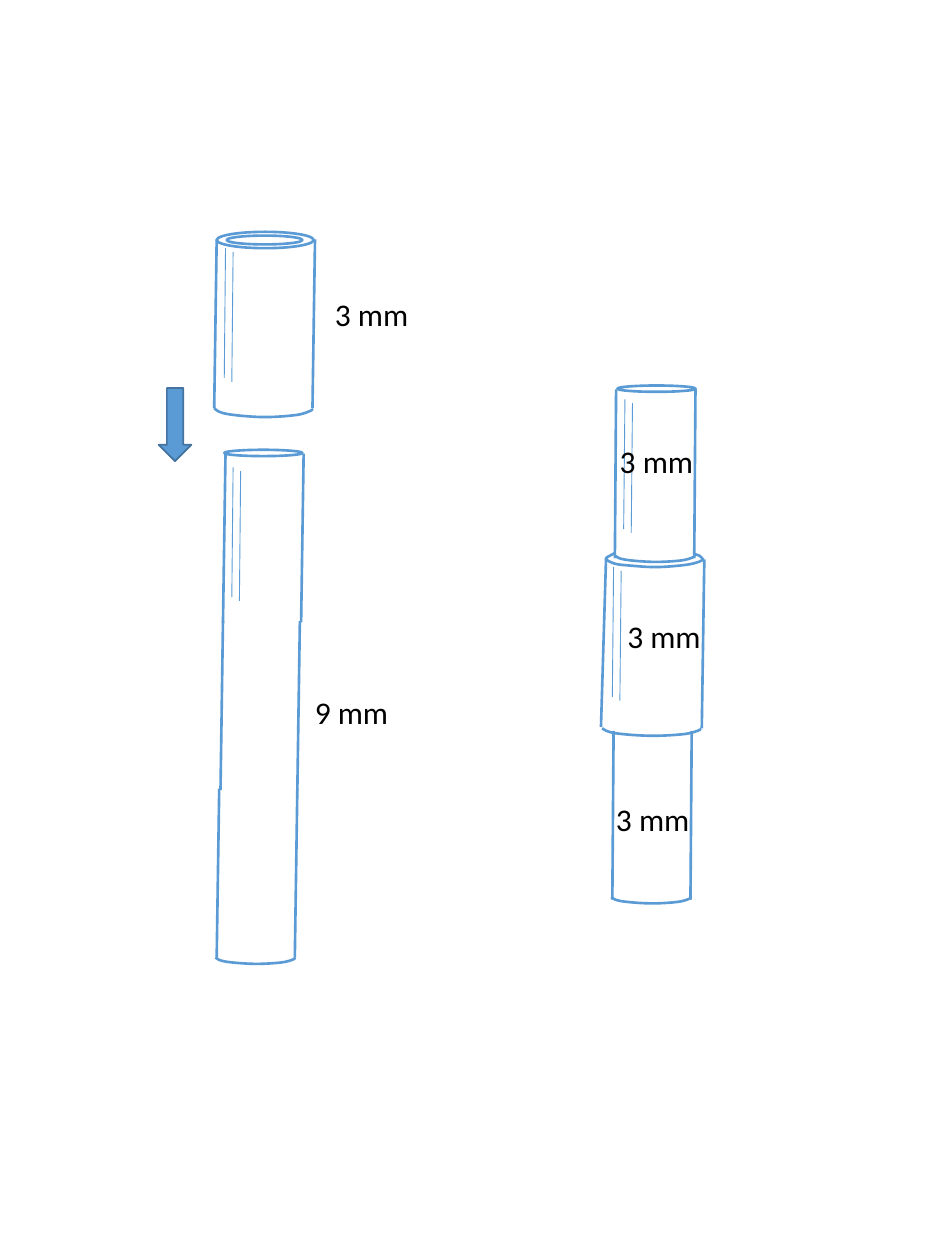
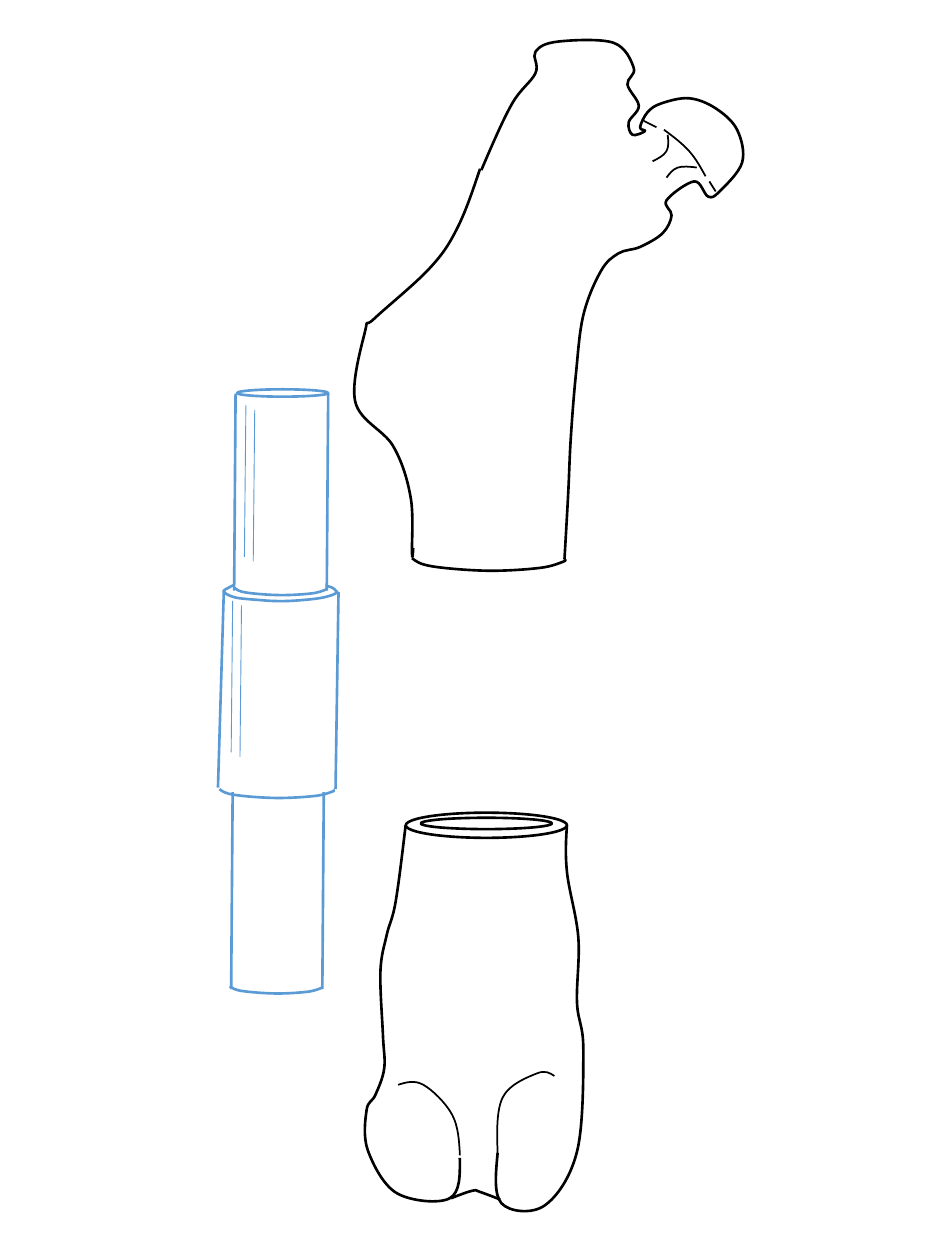
from dataclasses import dataclass, field

from lxml.etree import SubElement
from pptx import Presentation
from pptx.dml.color import RGBColor
from pptx.enum.shapes import MSO_CONNECTOR, MSO_SHAPE
from pptx.enum.text import MSO_AUTO_SIZE
from pptx.oxml.ns import qn
from pptx.util import Inches, Pt

BLUE, EDGE, BLACK = "5B9BD5", "43739E", "000000"
FONT = "Calibri"
THICK, MID, THIN = 1.5, 1, 0.5

ARC = [(0, 0), (0.13, 0.65), (0.49, 1), (0.83, 0.78), (0.98, 0.3), (0.99, 0.1)]
RIM = [(0.09, 0), (0.01, 0.3), (0, 0.38), (0.01, 0.5), (0.05, 0.66),
       (0.13, 0.82), (0.3, 0.93), (0.45, 1), (0.62, 0.98), (0.84, 0.83),
       (0.96, 0.62), (1, 0.45), (0.99, 0.37), (0.96, 0.18), (0.9, 0.06)]

KNEE = [
    (THICK, [(3.22, 6.55), (3.14, 7.16), (3.07, 7.42), (3.02, 7.71),
             (3.04, 8.22), (3.05, 8.48), (2.98, 8.69), (2.91, 8.81),
             (2.92, 9.13), (3.15, 9.47), (3.57, 9.51), (3.65, 9.19)]),
    (THICK, [(3.95, 9.15), (3.98, 9.55), (4.32, 9.57), (4.58, 9.14),
             (4.63, 8.33), (4.58, 7.96), (4.59, 7.44), (4.5, 6.92),
             (4.5, 6.55)]),
    (MID, [(3.65, 9.17), (3.59, 8.85), (3.36, 8.61), (3.16, 8.61)]),
    (MID, [(3.95, 9.16), (3.99, 8.71), (4.26, 8.52), (4.4, 8.54)]),
    (THICK, [(3.58, 9.51), (3.75, 9.45), (3.81, 9.46), (3.97, 9.52)]),
]
HIP = [
    (THICK, [(3.82, 1.35), (4.06, 0.83), (4.25, 0.58), (4.25, 0.41),
             (4.43, 0.33), (4.87, 0.34), (5.03, 0.54), (4.98, 0.67),
             (5.07, 0.84), (4.99, 0.97), (5.02, 1.07), (5.12, 1.04),
             (5.08, 1.01), (5.14, 0.89), (5.25, 0.82), (5.47, 0.78),
             (5.68, 0.86), (5.85, 1.03), (5.89, 1.29), (5.71, 1.52),
             (5.62, 1.56), (5.51, 1.44), (5.29, 1.59), (5.33, 1.71),
             (5.26, 1.85), (5.08, 1.96), (4.91, 2.01), (4.77, 2.15),
             (4.63, 2.5), (4.57, 2.98), (4.53, 3.48), (4.51, 3.91),
             (4.48, 4.44)]),
    (THICK, [(3.81, 1.34), (3.63, 1.81), (3.41, 2.13), (2.97, 2.53),
             (2.9, 2.62), (2.82, 3.19), (3.12, 3.54), (3.26, 3.95),
             (3.27, 4.39), (3.28, 4.35)]),
    (MID, [(5.27, 1.03), (5.47, 1.2), (5.6, 1.4)]),
    (MID, [(5.3, 1.07), (5.29, 1.2), (5.18, 1.28)]),
    (MID, [(5.53, 1.33), (5.38, 1.33), (5.29, 1.41)]),
]


def color(code):
    return RGBColor.from_string(code)


def knots(pts):
    trios = []
    last = len(pts) - 1
    for i in range(last):
        a, b = pts[i], pts[i + 1]
        lead = tail = None
        if i > 0:
            lead = tuple(p + (n - m) / 6 for m, p, n in zip(pts[i - 1], a, b))
        if i + 1 < last:
            tail = tuple(p - (n - m) / 6 for m, p, n in zip(a, b, pts[i + 2]))
        lead = lead or tuple((p + q) / 2 for p, q in zip(a, tail))
        tail = tail or tuple((p + q) / 2 for p, q in zip(lead, b))
        trios += [lead, tail, b]
    return trios


@dataclass
class Pen:
    slide: object
    ink: str
    x: float = 0
    y: float = 0
    scale: float = 1
    drawn: list = field(default_factory=list)

    def at(self, x, y):
        return Inches(self.x + x * self.scale), Inches(self.y + y * self.scale)

    def style(self, item, width):
        item.line.color.rgb = color(self.ink)
        item.line.width = Pt(width)
        self.drawn.append(item)

    def line(self, start, end, width=THICK):
        item = self.slide.shapes.add_connector(
            MSO_CONNECTOR.STRAIGHT, *self.at(*start), *self.at(*end))
        SubElement(item._element.spPr, qn("a:effectLst"))
        self.style(item, width)

    def oval(self, x, y, w, h):
        item = self.slide.shapes.add_shape(
            MSO_SHAPE.OVAL, *self.at(x, y),
            Inches(w * self.scale), Inches(h * self.scale))
        item.shadow.inherit = False
        item.fill.background()
        self.style(item, THICK)

    def curve(self, pts, width=THICK):
        form = self.slide.shapes.build_freeform(*self.at(*pts[0]))
        form.add_line_segments([self.at(*p) for p in knots(pts)], close=False)
        item = form.convert_to_shape()
        trace = item._element.find(".//" + qn("a:path"))
        steps = trace.findall(qn("a:lnTo"))
        for i in range(0, len(steps), 3):
            bend = SubElement(trace, qn("a:cubicBezTo"))
            for step in steps[i:i + 3]:
                bend.append(step[0])
                trace.remove(step)
        item.shadow.inherit = False
        item.fill.background()
        self.style(item, width)

    def fit(self, form, x, y, w, h):
        self.curve([(x + u * w, y + v * h) for u, v in form])

    def wall(self, x, y, lean=0.02):
        self.line((x, y), (x - lean, y + 1.34))

    def shine(self, x, y):
        for dx, dy in ((0, 0), (0.06, 0.03)):
            self.line((x + dx, y + dy), (x + dx - 0.01, y + dy + 1.03), THIN)

    def group(self):
        self.slide.shapes.add_group_shape(self.drawn)


def sleeve(pen):
    pen.oval(1.72, 1.84, 0.77, 0.13)
    pen.oval(1.8, 1.87, 0.6, 0.07)
    pen.fit(ARC, 1.7, 3.24, 0.78, 0.07)
    for x in (1.72, 2.5):
        pen.wall(x, 1.9)
    pen.shine(1.79, 1.97)


def rod(pen):
    pen.oval(1.78, 3.57, 0.62, 0.05)
    pen.fit(ARC, 1.71, 7.6, 0.63, 0.05)
    for i, (left, right) in enumerate(((1.79, 2.41), (1.77, 2.38), (1.74, 2.36))):
        for x in (left, right):
            pen.wall(x, 3.6 + 1.33 * i)
    pen.shine(1.85, 3.71)


def joint(pen):
    pen.oval(0.13, 0, 0.62, 0.05)
    pen.fit(ARC, 0.08, 4.06, 0.63, 0.05)
    for x, y in ((0.12, 0.03), (0.75, 0.03), (0.1, 2.74), (0.72, 2.74)):
        pen.wall(x, y, 0.01)
    pen.fit(ARC, 0.01, 2.72, 0.78, 0.06)
    pen.wall(0.04, 1.37, 0.04)
    pen.wall(0.82, 1.38)
    pen.fit(RIM, 0.04, 1.33, 0.77, 0.11)
    pen.fit(ARC, 0.11, 1.35, 0.63, 0.05)
    pen.shine(0.1, 1.44)
    pen.shine(0.19, 0.11)


def knee(pen):
    for width, pts in KNEE:
        pen.curve(pts, width)
    pen.oval(3.22, 6.45, 1.28, 0.2)
    pen.oval(3.34, 6.49, 1.04, 0.09)


def hip(pen):
    for width, pts in HIP:
        pen.curve(pts, width)
    pen.line((5.11, 0.96), (5.21, 1.01), MID)
    pen.line((5.63, 1.44), (5.68, 1.52), MID)
    pen.fit(ARC, 3.27, 4.43, 1.22, 0.1)


def arrow(slide, x, y, w, h):
    item = slide.shapes.add_shape(
        MSO_SHAPE.DOWN_ARROW, Inches(x), Inches(y), Inches(w), Inches(h))
    item.shadow.inherit = False
    item.fill.solid()
    item.fill.fore_color.rgb = color(BLUE)
    item.line.color.rgb = color(EDGE)
    item.line.width = Pt(1)


def label(slide, text, x, y):
    box = slide.shapes.add_textbox(Inches(x), Inches(y), Inches(0.79), Inches(0.4))
    frame = box.text_frame
    frame.word_wrap = False
    frame.auto_size = MSO_AUTO_SIZE.SHAPE_TO_FIT_TEXT
    frame.text = text
    font = frame.paragraphs[0].runs[0].font
    font.name = FONT
    font.size = Pt(18)
    font.color.rgb = color(BLACK)


def main():
    deck = Presentation()
    deck.slide_width, deck.slide_height = Inches(7.5), Inches(10)
    blank = deck.slide_layouts[6]

    parts = deck.slides.add_slide(blank)
    pen = Pen(parts, BLUE)
    sleeve(pen)
    rod(pen)
    joint(Pen(parts, BLUE, 4.77, 3.06))
    arrow(parts, 1.26, 3.08, 0.26, 0.58)
    for text, x, y in (("3 mm", 2.56, 2.29), ("9 mm", 2.4, 5.45),
                       ("3 mm", 4.82, 3.46), ("3 mm", 4.88, 4.85),
                       ("3 mm", 4.79, 6.3)):
        label(parts, text, x, y)

    bone = deck.slides.add_slide(blank)
    for draw, pen in ((joint, Pen(bone, BLUE, 1.73, 3.09, 7 / 6)),
                      (knee, Pen(bone, BLACK)),
                      (hip, Pen(bone, BLACK))):
        draw(pen)
        pen.group()

    deck.save("out.pptx")


if __name__ == "__main__":
    main()
